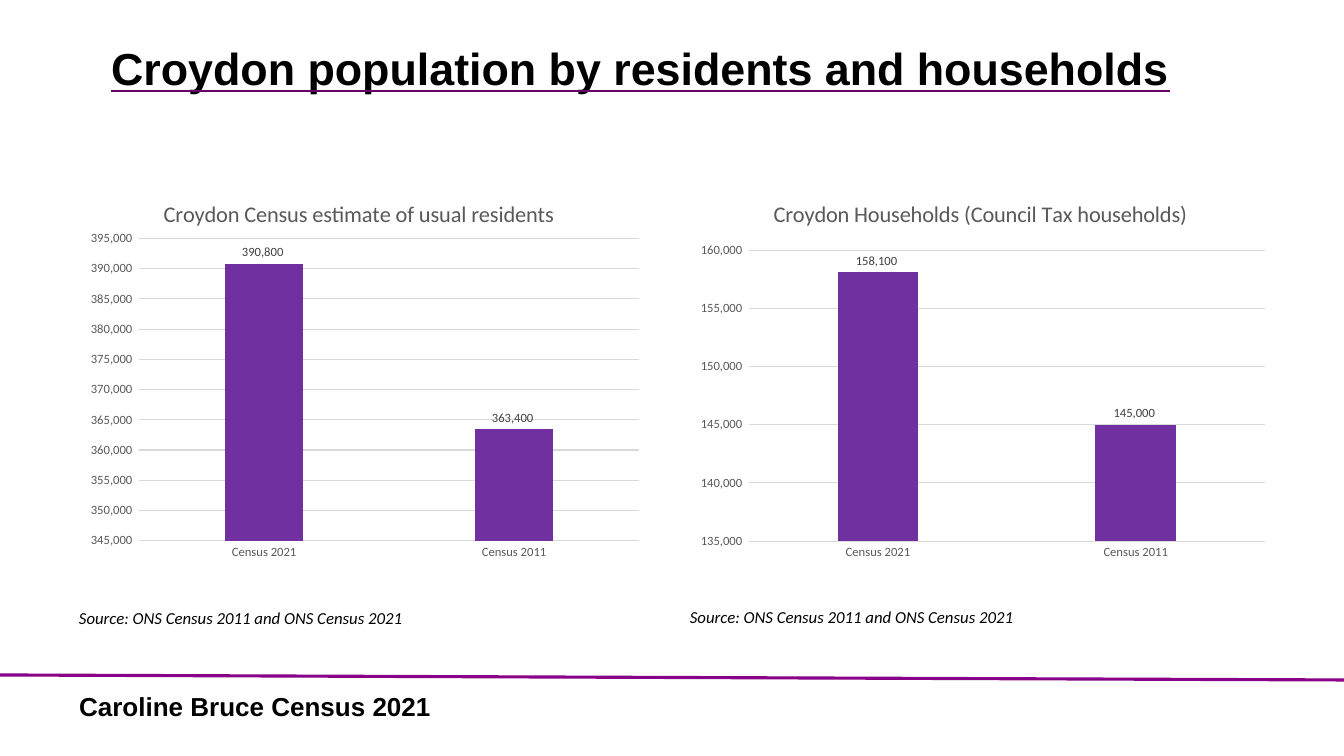
from lxml import etree
from pptx import Presentation
from pptx import util as u
from pptx.chart.data import CategoryChartData
from pptx.dml.color import RGBColor
from pptx.enum import chart as ch, shapes, text
from pptx.oxml import parse_xml
from pptx.oxml.ns import nsdecls, qn

EMU_PER_PX = 914400 / 100.8
PURPLE, GREY, GRID = "7030A0", "595959", "D9D9D9"
NUMBER_FORMAT = r"#,##0_ ;\-#,##0\ "


def px(*lengths):
    return [u.Emu(round(length * EMU_PER_PX)) for length in lengths]


def style(font, size, color, name="Calibri", **extras):
    font.size, font.name = u.Pt(size), name
    font.color.rgb = RGBColor.from_string(color)
    font.bold = extras.get("bold", False)
    font.italic = extras.get("italic", False)


prs = Presentation()
prs.slide_width, prs.slide_height = px(1344, 756)
slide = prs.slides.add_slide(prs.slide_layouts[1])

# Footer rule
rule = slide.shapes.add_connector(shapes.MSO_CONNECTOR.STRAIGHT, *px(0, 675, 1344, 680))
rule.line.color.rgb = RGBColor.from_string("880088")
rule.line.width = u.Pt(2.25)
etree.SubElement(rule._element.spPr, qn("a:effectLst"))

# Title and author
title, author = slide.shapes.title, slide.placeholders[1]
for holder, box, words, size, spacing, anchor in (
    (title, (101, 25, 1159, 93), "Croydon population by residents and households",
     32, 0.9, text.MSO_ANCHOR.MIDDLE),
    (author, (69, 694, 390, 47), "Caroline Bruce Census 2021",
     18.6, 0.7, text.MSO_ANCHOR.TOP),
):
    holder.left, holder.top, holder.width, holder.height = px(*box)
    frame = holder.text_frame
    frame.text = words
    frame.auto_size = text.MSO_AUTO_SIZE.NONE
    frame.vertical_anchor = anchor
    line = frame.paragraphs[0]
    props = line._p.get_or_add_pPr()
    props.set("marL", "0")
    props.set("indent", "0")
    etree.SubElement(props, qn("a:buNone"))
    line.alignment = text.PP_ALIGN.LEFT
    line.line_spacing = spacing
    line.space_before = u.Pt(0)
    style(line.runs[0].font, size, "000000", "Arial", bold=True)

title_font = title.text_frame.paragraphs[0].runs[0].font
title_font.underline = True
title_font._element.find(qn("a:latin")).addprevious(parse_xml(
    f'<a:uFill {nsdecls("a")}><a:solidFill><a:srgbClr val="660066"/></a:solidFill></a:uFill>'))

# Charts, each with its source line
for heading, values, low, high, left, width, plot, source_top in (
    ("Croydon Census estimate of usual residents", (390800, 363400), 345000, 395000,
     69, 580, (0.121, 0.145, 0.862, 0.775), 603),
    ("Croydon Households (Council Tax households)", (158100, 145000), 135000, 160000,
     680, 601, (0.115, 0.175, 0.858, 0.746), 602),
):
    data = CategoryChartData(number_format=NUMBER_FORMAT)
    data.categories = ["Census 2021", "Census 2011"]
    data.add_series(heading, values)
    chart = slide.shapes.add_chart(
        ch.XL_CHART_TYPE.COLUMN_CLUSTERED, *px(left, 182, width, 390), data).chart
    style(chart.font, 10, "000000")
    chart.has_legend = False
    chart.has_title = True
    chart.chart_title.include_in_layout = False
    chart.chart_title.text_frame.text = heading
    style(chart.chart_title.text_frame.paragraphs[0].runs[0].font, 16, GREY)

    for axis in (chart.category_axis, chart.value_axis):
        axis.major_tick_mark = axis.minor_tick_mark = ch.XL_TICK_MARK.NONE
        style(axis.tick_labels.font, 9, GREY)
    scale = chart.value_axis
    scale.minimum_scale, scale.maximum_scale, scale.major_unit = low, high, 5000
    scale.tick_labels.number_format = NUMBER_FORMAT
    scale.tick_labels.number_format_is_linked = False
    scale.format.line.fill.background()
    for stroke in (chart.category_axis.format.line, scale.major_gridlines.format.line):
        stroke.color.rgb = RGBColor.from_string(GRID)
        stroke.width = u.Pt(0.75)

    bars = chart.plots[0]
    bars.gap_width, bars.overlap, bars.vary_by_categories = 219, -27, False
    bars.series[0].format.fill.solid()
    bars.series[0].format.fill.fore_color.rgb = RGBColor.from_string(PURPLE)
    bars.has_data_labels = True
    labels = bars.data_labels
    labels.show_value = True
    labels.position = ch.XL_LABEL_POSITION.OUTSIDE_END
    labels.number_format, labels.number_format_is_linked = NUMBER_FORMAT, False
    style(labels.font, 9, "404040")

    area = chart._chartSpace.find(".//" + qn("c:plotArea"))
    for automatic in area.findall(qn("c:layout")):
        area.remove(automatic)
    sizes = "".join(f'<c:{key} val="{part}"/>' for key, part in zip("xywh", plot))
    area.insert(0, parse_xml(
        f'<c:layout {nsdecls("c")}><c:manualLayout><c:layoutTarget val="inner"/>'
        f'<c:xMode val="edge"/><c:yMode val="edge"/>{sizes}</c:manualLayout></c:layout>'))

    source = slide.shapes.add_textbox(*px(left, source_top, 370, 30)).text_frame
    source.word_wrap = True
    source.text = "Source: ONS Census 2011 and ONS Census 2021"
    style(source.paragraphs[0].runs[0].font, 12, "000000", italic=True)

prs.save("out.pptx")
